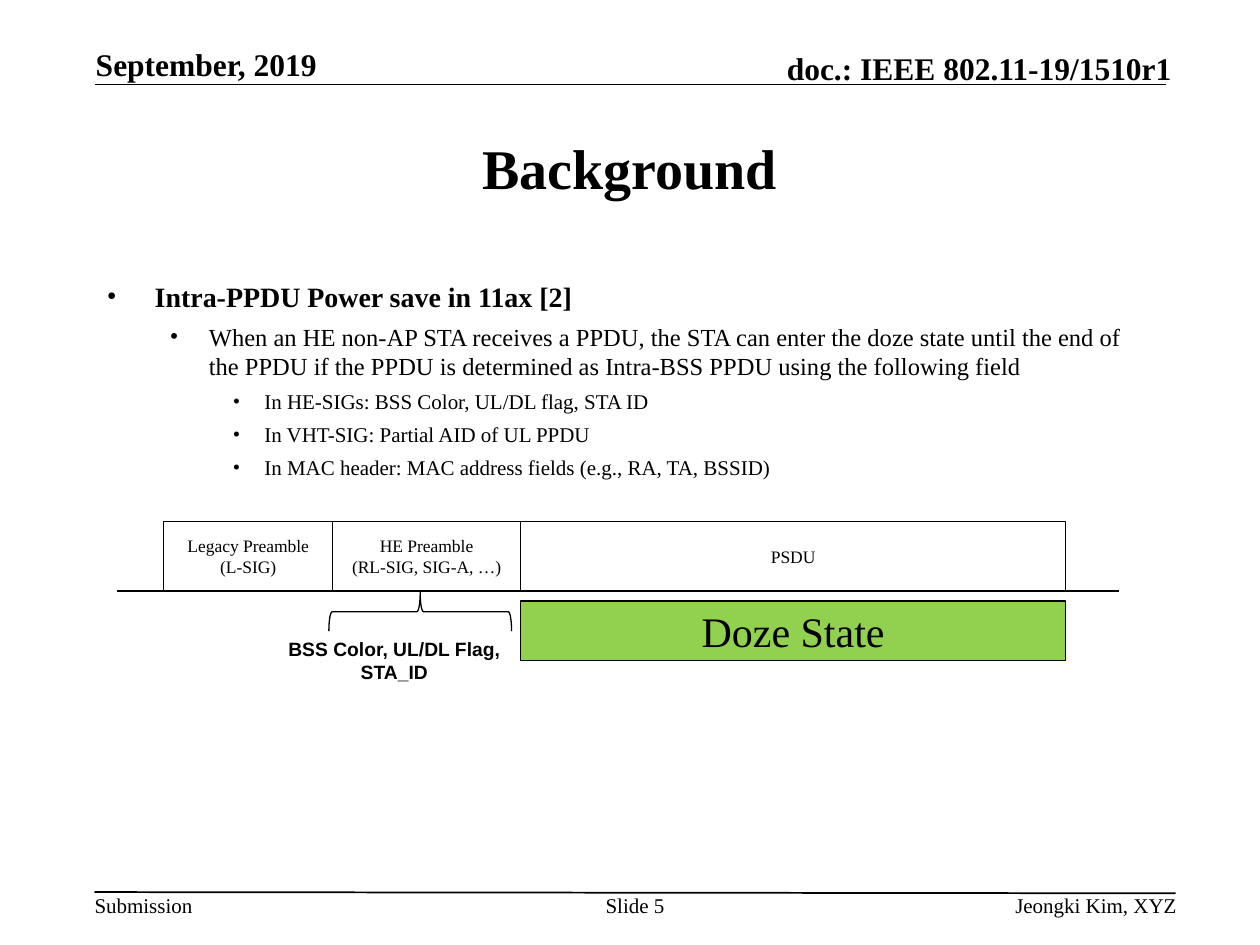
from collections import namedtuple

from lxml import etree
from pptx import Presentation, util as u
from pptx.dml.color import RGBColor
from pptx.enum import shapes, text
from pptx.oxml.ns import qn

PX = 9144  # 100 px to the inch
COLORS = {"ink": "000000", "doze": "92D050"}
SERIF, SANS = "Times New Roman", "Arial"
LEFT, CENTER, RIGHT = text.PP_ALIGN.LEFT, text.PP_ALIGN.CENTER, text.PP_ALIGN.RIGHT
TOP, MIDDLE, BOTTOM = text.MSO_ANCHOR.TOP, text.MSO_ANCHOR.MIDDLE, text.MSO_ANCHOR.BOTTOM
Box = namedtuple("Box", "left top width height")


def emu(*lengths):
    return [u.Emu(length * PX) for length in lengths]


def color(name):
    return RGBColor.from_string(COLORS[name])


def style(paragraph, size, bold=False, align=LEFT, font=SERIF):
    paragraph.alignment = align
    paragraph.font.name = font
    paragraph.font.size = u.Pt(size)
    paragraph.font.bold = bold
    paragraph.font.color.rgb = color("ink")


def fill_frame(frame, lines, size, anchor=TOP, inset=(0, 0), **look):
    frame.word_wrap = True
    frame.vertical_anchor = anchor
    frame.margin_left, frame.margin_top = emu(*inset)
    frame.margin_right, frame.margin_bottom = emu(*inset)
    for index, line in enumerate(lines):
        paragraph = frame.add_paragraph() if index else frame.paragraphs[0]
        paragraph.text = line
        style(paragraph, size, **look)


def add_label(slide, box, line, size, **look):
    shape = slide.shapes.add_textbox(*emu(*box))
    fill_frame(shape.text_frame, [line], size, **look)


def add_rule(slide, left, top, right, bottom, weight):
    line = slide.shapes.add_connector(
        shapes.MSO_CONNECTOR.STRAIGHT, *emu(left, top, right, bottom))
    line.line.color.rgb = color("ink")
    line.line.width = u.Pt(weight)
    etree.SubElement(line._element.spPr, qn("a:effectLst"))


def add_outline(slide, kind, box, fill=None):
    shape = slide.shapes.add_shape(kind, *emu(*box))
    shape.shadow.inherit = False
    if fill:
        shape.fill.solid()
        shape.fill.fore_color.rgb = color(fill)
    else:
        shape.fill.background()
    shape.line.color.rgb = color("ink")
    shape.line.width = u.Pt(0.75)
    return shape


def add_block(slide, box, lines, size, fill=None):
    shape = add_outline(slide, shapes.MSO_SHAPE.RECTANGLE, box, fill)
    fill_frame(shape.text_frame, lines, size, anchor=MIDDLE, inset=(10, 5), align=CENTER)


def add_header(slide, box):
    left, top, width, height = box
    add_rule(slide, left, top + height, left + width, top + height, 1)
    add_label(slide, (left + 1, top, 205, 30), "September, 2019", 18,
              bold=True, anchor=BOTTOM)
    add_label(slide, (left + width + 5 - 383, top + 3, 383, 30),
              "doc.: IEEE 802.11-19/1510r1", 18, bold=True, anchor=BOTTOM, align=RIGHT)


def add_footer(slide, box):
    left, top, width, height = box
    add_rule(slide, left, top, left + width, top + 1, 1)
    add_label(slide, (left, top, 78, height), "Submission", 12)
    add_label(slide, (left + 400, top, 58, height), "Slide 5", 12, align=CENTER)
    add_label(slide, (left + width - 347, top, 348, height), "Jeongki Kim, XYZ", 12,
              align=RIGHT)


def add_bullets(slide, box, items):
    # For each level: text indent, bullet hang, size, space before
    levels = [(38, 38, 16, 6), (81, 31, 14, 5), (125, 25, 12, 4.5)]
    frame = slide.shapes.add_textbox(*emu(*box)).text_frame
    frame.word_wrap = True
    for index, (level, line) in enumerate(items):
        indent, hang, size, space = levels[level]
        paragraph = frame.add_paragraph() if index else frame.paragraphs[0]
        paragraph.text = line
        paragraph.level = level
        if index:
            paragraph.space_before = u.Pt(space)
        properties = paragraph._p.get_or_add_pPr()
        properties.set("marL", str(indent * PX))
        properties.set("indent", str(-hang * PX))
        etree.SubElement(properties, qn("a:buFont")).set("typeface", SERIF)
        etree.SubElement(properties, qn("a:buChar")).set("char", "•")
        style(paragraph, size, bold=level == 0)


def add_frame_diagram(slide, box):
    left, top, width, height = box
    row = 55
    add_rule(slide, left, top + row, left + width, top + row, 0.75)

    # Fields of the frame, side by side
    fields = [(134, ["Legacy Preamble", "(L-SIG)"]),
              (149, ["HE Preamble", "(RL-SIG, SIG-A, …)"]),
              (433, ["PSDU"])]
    x = left + 37
    for field_width, lines in fields:
        add_block(slide, (x, top, field_width, row), lines, 10)
        x += field_width

    # Doze period below the last field
    add_block(slide, (x - 433, top + 63, 433, 47), ["Doze State"], 24, "doze")

    # Brace turned to point up at the HE preamble
    brace = add_outline(slide, shapes.MSO_SHAPE.LEFT_BRACE, (left + 225, top - 1, 31, 145))
    brace.rotation = 90
    add_label(slide, (left + 120, top + 87, 200, 47), "BSS Color, UL/DL Flag, STA_ID", 11,
              inset=(10, 5), bold=True, align=CENTER, font=SANS)


def main():
    presentation = Presentation()
    presentation.slide_width, presentation.slide_height = emu(1000, 750)
    slide = presentation.slides.add_slide(presentation.slide_layouts[6])

    add_header(slide, Box(75, 36, 850, 31))
    add_label(slide, Box(75, 75, 850, 116), "Background", 32,
              bold=True, anchor=MIDDLE, inset=(10, 5), align=CENTER)
    add_bullets(slide, Box(75, 217, 850, 450), [
        (0, "Intra-PPDU Power save in 11ax [2]"),
        (1, "When an HE non-AP STA receives a PPDU, the STA can enter the doze state until "
            "the end of the PPDU if the PPDU is determined as Intra-BSS PPDU using the "
            "following field"),
        (2, "In HE-SIGs: BSS Color, UL/DL flag, STA ID"),
        (2, "In VHT-SIG: Partial AID of UL PPDU"),
        (2, "In MAC header: MAC address fields (e.g., RA, TA, BSSID)"),
    ])
    add_frame_diagram(slide, Box(93, 414, 795, 134))
    add_footer(slide, Box(75, 708, 858, 20))
    presentation.save("out.pptx")


if __name__ == "__main__":
    main()
